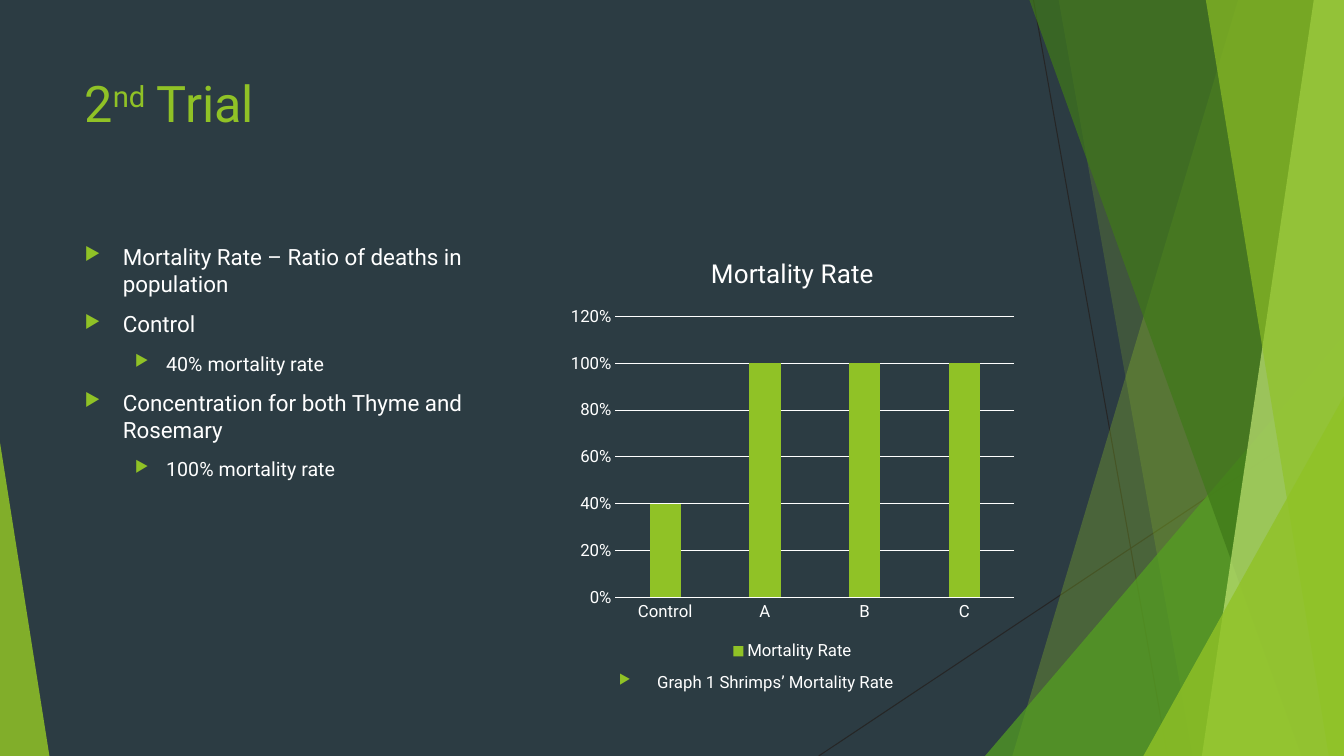
from dataclasses import dataclass

from lxml.etree import SubElement
from pptx import Presentation
from pptx.chart.data import CategoryChartData
from pptx.dml.color import RGBColor
from pptx.enum.chart import XL_CHART_TYPE, XL_LEGEND_POSITION, XL_TICK_MARK
from pptx.enum.shapes import MSO_CONNECTOR, MSO_SHAPE
from pptx.enum.text import MSO_ANCHOR
from pptx.oxml.ns import qn
from pptx.util import Inches, Pt


@dataclass(frozen=True)
class Theme:
    background: str = "2C3C43"
    accent: str = "90C226"
    green: str = "54A021"
    dark_green: str = "3F7819"
    pale_green: str = "C0E474"
    hairline: str = "262626"
    text: str = "FFFFFF"
    font: str = "Roboto"
    title_size: float = 36
    chart_title_size: float = 18.6
    level_sizes: tuple = (16, 14)
    small_size: float = 12
    line_width: float = 0.75


THEME = Theme()
WIDTH, HEIGHT = 13.33, 7.5

# Content
TITLE_RUNS = [("2", 0), ("nd", 30), (" Trial", 0)]
BULLETS = [
    (0, "Mortality Rate – Ratio of deaths in population"),
    (0, "Control"),
    (1, "40% mortality rate"),
    (0, "Concentration for both Thyme and Rosemary"),
    (1, "100% mortality rate"),
]
CAPTION = [(0, "Graph 1 Shrimps’ Mortality Rate")]
CHART_TITLE = "Mortality Rate"
MORTALITY = {"Control": 0.4, "A": 1, "B": 1, "C": 1}

# Layout: two equal columns share one row
MARGIN, ROW_TOP, COLUMN_WIDTH, ROW_HEIGHT = 0.74, 2.36, 4.58, 4.24
COLUMN_STEP = 4.83
TITLE_BOX = (MARGIN, 0.67, 9.4, 1.44)
BODY_BOX, CHART_BOX = [
    (MARGIN + column * COLUMN_STEP, ROW_TOP, COLUMN_WIDTH, ROW_HEIGHT) for column in range(2)
]
CAPTION_BOX = (6.04, 6.61, 4.56, 0.45)
LEVEL_INDENTS = [(0.38, -0.38), (0.81, -0.31)]

# Decoration, back to front
HAIRLINES = [(10.25, 0, 11.58, HEIGHT), (WIDTH, 4.03, 8.12, HEIGHT)]
# Panel: top left x, bottom left x; it runs to the right edge of the slide
# Wedge: left, top, width, apex share; it stands on the bottom edge
FACETS = [
    ("panel", (12.28, 10.04), THEME.accent, 30),
    ("panel", (10.5, 11.83), THEME.accent, 20),
    ("wedge", (9.77, 3.33, 3.56, 1), THEME.green, 72),
    ("panel", (10.21, 12.91), THEME.dark_green, 70),
    ("panel", (13.03, 11.92), THEME.pale_green, 70),
    ("panel", (11.96, 13.18), THEME.accent, 65),
    ("wedge", (11.34, 3.93, 1.99, 1), THEME.accent, 80),
    ("wedge", (0, 4.39, 0.49, 0), THEME.accent, 85),
]


def color(value):
    return RGBColor.from_string(value)


def inches(values):
    return [Inches(value) for value in values]


def style_font(font, size, value=THEME.text):
    font.name = THEME.font
    font.size = Pt(size)
    font.bold = False
    font.color.rgb = color(value)


def style_line(line, value):
    line.color.rgb = color(value)
    line.width = Pt(THEME.line_width)


def add_hairline(slide, ends):
    connector = slide.shapes.add_connector(MSO_CONNECTOR.STRAIGHT, *inches(ends))
    style_line(connector.line, THEME.hairline)
    SubElement(connector._element.spPr, qn("a:effectLst"))


def add_panel(slide, top_left, bottom_left):
    corners = [(top_left, 0), (WIDTH, 0), (WIDTH, HEIGHT), (bottom_left, HEIGHT)]
    points = [(round(x * 100), round(y * 100)) for x, y in corners]
    builder = slide.shapes.build_freeform(*points[0], scale=Inches(0.01))
    builder.add_line_segments(points[1:], close=True)
    return builder.convert_to_shape()


def add_wedge(slide, left, top, width, apex):
    shape = slide.shapes.add_shape(
        MSO_SHAPE.ISOSCELES_TRIANGLE, *inches((left, top, width, HEIGHT - top))
    )
    shape.adjustments[0] = apex
    return shape


def add_facet(slide, kind, geometry, fill, opacity):
    shape = {"panel": add_panel, "wedge": add_wedge}[kind](slide, *geometry)
    shape.shadow.inherit = False
    shape.line.fill.background()
    shape.fill.solid()
    shape.fill.fore_color.rgb = color(fill)
    fill_color = shape._element.spPr.find(".//" + qn("a:srgbClr"))
    SubElement(fill_color, qn("a:alpha"), val=str(opacity * 1000))


def add_text_frame(slide, box):
    frame = slide.shapes.add_textbox(*inches(box)).text_frame
    frame.word_wrap = True
    frame.vertical_anchor = MSO_ANCHOR.TOP
    return frame


def add_title(slide):
    paragraph = add_text_frame(slide, TITLE_BOX).paragraphs[0]
    for text, raised in TITLE_RUNS:
        run = paragraph.add_run()
        run.text = text
        style_font(run.font, THEME.title_size, THEME.accent)
        if raised:
            run._r.get_or_add_rPr().set("baseline", str(raised * 1000))


def add_bullets(slide, box, items, sizes):
    frame = add_text_frame(slide, box)
    for index, (level, text) in enumerate(items):
        paragraph = frame.add_paragraph() if index else frame.paragraphs[0]
        paragraph.level = level
        paragraph.space_before = Pt(10)
        properties = paragraph._p.get_or_add_pPr()
        for name, length in zip(("marL", "indent"), LEVEL_INDENTS[level]):
            properties.set(name, str(Inches(length)))
        bullet_color = SubElement(properties, qn("a:buClr"))
        SubElement(bullet_color, qn("a:srgbClr"), val=THEME.accent)
        SubElement(properties, qn("a:buSzPct"), val="80000")
        SubElement(properties, qn("a:buChar"), char="▶")
        run = paragraph.add_run()
        run.text = text
        style_font(run.font, sizes[level])


def add_mortality_chart(slide):
    data = CategoryChartData(number_format="0%")
    data.categories = list(MORTALITY)
    data.add_series(CHART_TITLE, list(MORTALITY.values()))
    chart = slide.shapes.add_chart(
        XL_CHART_TYPE.COLUMN_CLUSTERED, *inches(CHART_BOX), data
    ).chart
    style_font(chart.font, THEME.small_size)

    # Title and legend
    run = chart.chart_title.text_frame.paragraphs[0].add_run()
    run.text = CHART_TITLE
    style_font(run.font, THEME.chart_title_size)
    chart.chart_title.include_in_layout = False
    chart.has_legend = True
    chart.legend.position = XL_LEGEND_POSITION.BOTTOM
    chart.legend.include_in_layout = False
    style_font(chart.legend.font, THEME.small_size)

    # Axes
    for axis in (chart.category_axis, chart.value_axis):
        axis.major_tick_mark = axis.minor_tick_mark = XL_TICK_MARK.NONE
        style_font(axis.tick_labels.font, THEME.small_size)
    style_line(chart.category_axis.format.line, THEME.text)
    values = chart.value_axis
    values.minimum_scale, values.maximum_scale, values.major_unit = 0, 1.2, 0.2
    values.tick_labels.number_format = "0%"
    values.tick_labels.number_format_is_linked = False
    values.format.line.fill.background()
    style_line(values.major_gridlines.format.line, THEME.text)

    # Columns
    plot = chart.plots[0]
    plot.vary_by_categories = False
    plot.gap_width, plot.overlap = 219, -27
    fill = plot.series[0].format.fill
    fill.solid()
    fill.fore_color.rgb = color(THEME.accent)


def main():
    presentation = Presentation()
    presentation.slide_width, presentation.slide_height = inches((WIDTH, HEIGHT))
    slide = presentation.slides.add_slide(presentation.slide_layouts[6])
    slide.background.fill.solid()
    slide.background.fill.fore_color.rgb = color(THEME.background)
    for ends in HAIRLINES:
        add_hairline(slide, ends)
    for facet in FACETS:
        add_facet(slide, *facet)
    add_title(slide)
    add_bullets(slide, BODY_BOX, BULLETS, THEME.level_sizes)
    add_mortality_chart(slide)
    add_bullets(slide, CAPTION_BOX, CAPTION, (THEME.small_size,))
    presentation.save("out.pptx")


if __name__ == "__main__":
    main()
